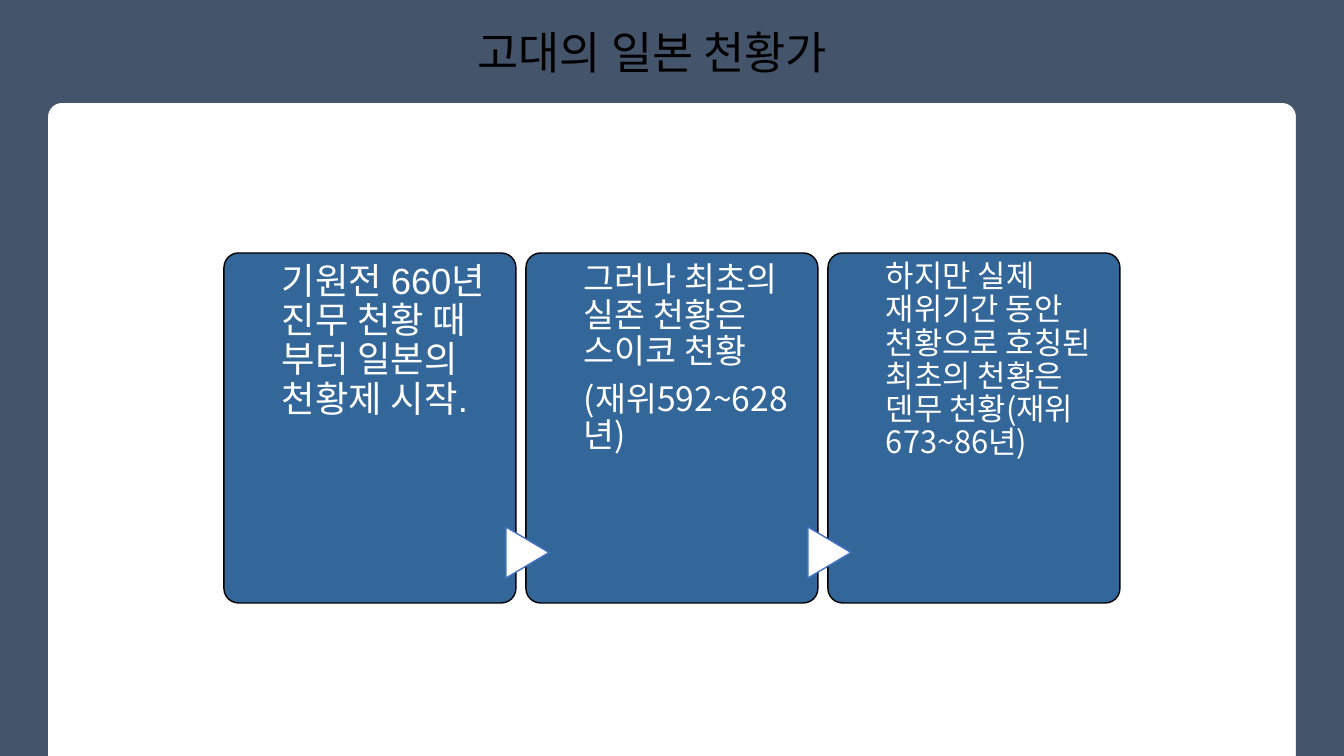
from math import cos, pi, sin

from lxml.etree import SubElement
from pptx import Presentation
from pptx.dml.color import RGBColor
from pptx.enum.shapes import MSO_SHAPE as SHAPE
from pptx.enum.text import MSO_ANCHOR as ANCHOR, MSO_AUTO_SIZE as AUTO_SIZE, PP_ALIGN as ALIGN
from pptx.oxml.ns import qn
from pptx.util import Pt

PX = 914400 / 100.8
COLORS = {"frame": "44546A", "card": "336699", "outline": "000000",
          "arrow_line": "4472C4", "white": "FFFFFF", "title": "000000"}
KOREAN = "Noto Sans CJK KR"
WIDTH, HEIGHT = 1344, 756


def px(*lengths):
    return [round(length * PX) for length in lengths]


def add_text(box, lines, size, latin, color, top_inset=0):
    """Fill a text box, one paragraph per line, without side margins."""
    frame = box.text_frame
    frame.word_wrap = True
    frame.auto_size = AUTO_SIZE.NONE
    frame.vertical_anchor = ANCHOR.TOP
    frame.margin_left = frame.margin_right = frame.margin_bottom = 0
    frame.margin_top = px(top_inset)[0]
    frame.text = "\n".join(lines)
    for paragraph in frame.paragraphs:
        font = paragraph.font
        font.size, font.name = Pt(size), latin
        font.color.rgb = RGBColor.from_string(COLORS[color])
        east_asian = SubElement(paragraph._p.pPr.find(qn("a:defRPr")), qn("a:ea"))
        east_asian.set("typeface", KOREAN)


prs = Presentation()
prs.slide_width, prs.slide_height = px(WIDTH, HEIGHT)
slide = prs.slides.add_slide(prs.slide_layouts[6])
shapes = slide.shapes

# Dark frame around a white panel with rounded top corners
LEFT, RIGHT, TOP, RADIUS = 48, 1296, 103, 14
STEPS = 12
outline = [(WIDTH, 0), (WIDTH, HEIGHT), (RIGHT, HEIGHT)]
for center_x, start in ((RIGHT - RADIUS, 0), (LEFT + RADIUS, pi / 2)):
    for step in range(STEPS + 1):
        angle = start + step * pi / 2 / STEPS
        outline.append((center_x + RADIUS * cos(angle), TOP + RADIUS - RADIUS * sin(angle)))
outline += [(LEFT, HEIGHT), (0, HEIGHT)]
builder = shapes.build_freeform(0, 0, scale=1.0)
builder.add_line_segments([px(*point) for point in outline], close=True)
frame_shape = builder.convert_to_shape()
frame_shape.shadow.inherit = False
frame_shape.fill.solid()
frame_shape.fill.fore_color.rgb = RGBColor.from_string(COLORS["frame"])
frame_shape.line.fill.background()

title = shapes.add_textbox(*px(430, 20, 445, 65))
add_text(title, ["고대의 일본 천황가"], 32, KOREAN, "title", top_inset=5)
title.text_frame.paragraphs[0].alignment = ALIGN.CENTER

# Three cards in a row, with an arrow into each one after the first
CARD_LEFT, CARD_TOP, CARD_W, CARD_H, PITCH = 224, 253, 292, 350, 302
cards = [
    (["기원전 660년 진무 천황 때 부터 일본의 천황제 시작."], 26, "Arial", 10),
    (["그러나 최초의 실존 천황은 스이코 천황", "(재위592~628년)"], 24, KOREAN, 9),
    (["하지만 실제 재위기간 동안 천황으로 호칭된 최초의 천황은 덴무 천황(재위673~86년)"],
     22, KOREAN, 8),
]
for index, (lines, size, latin, top_inset) in enumerate(cards):
    left = CARD_LEFT + index * PITCH
    parts = [(SHAPE.ROUNDED_RECTANGLE, (left, CARD_TOP, CARD_W, CARD_H), "card", "outline")]
    if index:
        parts.append((SHAPE.FLOWCHART_EXTRACT, (left - 24, 531, 51, 43), "white", "arrow_line"))
    for preset, place, fill, line in parts:
        part = shapes.add_shape(preset, *px(*place))
        part.shadow.inherit = False
        part.fill.solid()
        part.fill.fore_color.rgb = RGBColor.from_string(COLORS[fill])
        part.line.color.rgb = RGBColor.from_string(COLORS[line])
        part.line.width = Pt(1)
        if preset == SHAPE.ROUNDED_RECTANGLE:
            part.adjustments[0] = 0.05
        else:
            part.rotation = 90

    story = shapes.add_textbox(*px(left + 58, CARD_TOP, 218, CARD_H))
    add_text(story, lines, size, latin, "white", top_inset)
    for paragraph in story.text_frame.paragraphs:
        paragraph.line_spacing = 0.9
        paragraph.space_after = Pt(8)

prs.save("out.pptx")
